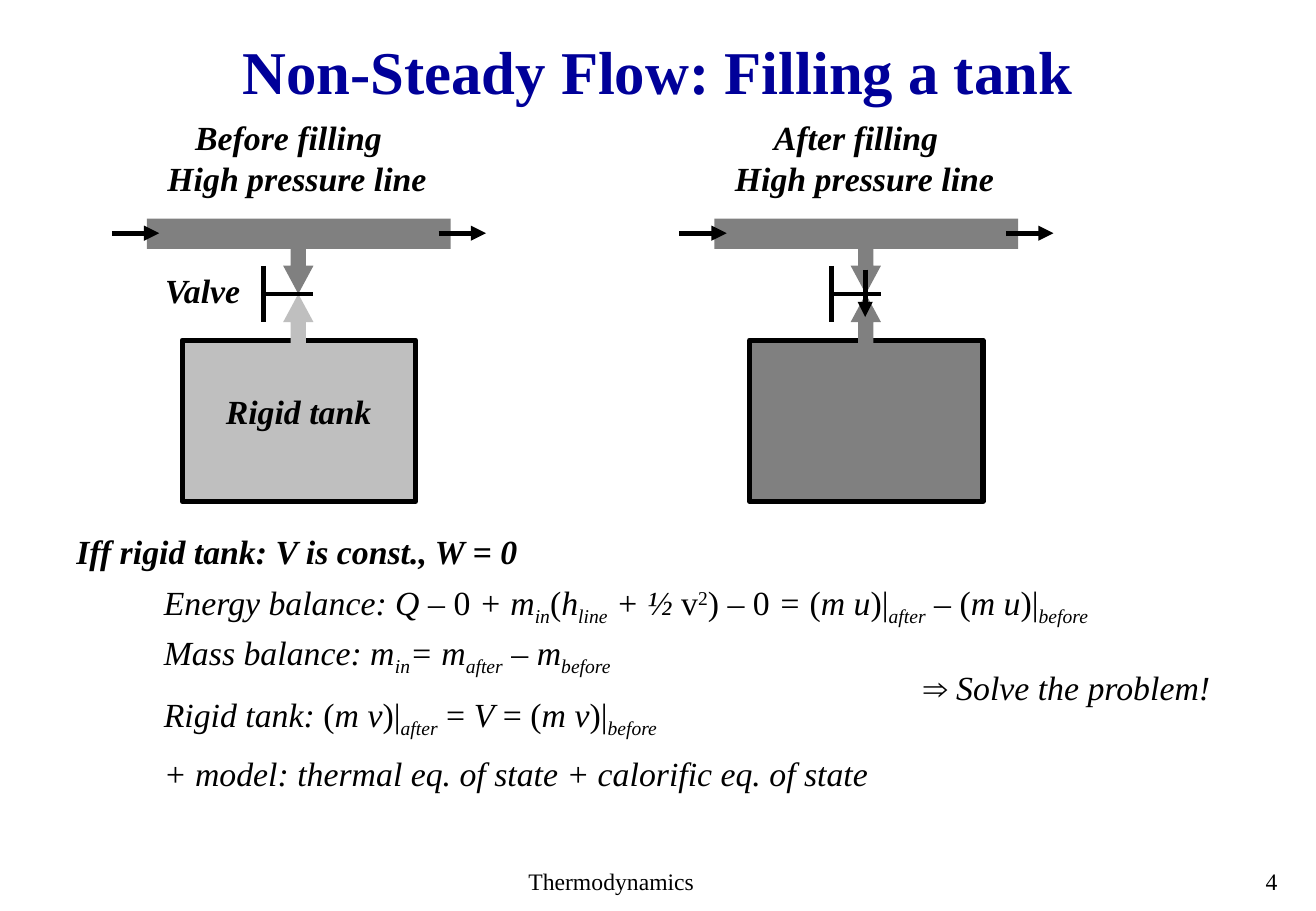
import pptx
import pptx.dml.color
import pptx.enum.dml
import pptx.enum.shapes
import pptx.enum.text
import pptx.oxml
import pptx.oxml.ns
import pptx.util
from pptx.util import Inches

FONT = "Times New Roman"
BLACK, NAVY, DARK, LIGHT = "000000", "000099", "808080", "BFBFBF"
BASELINES = {"sub": "-25000", "sup": "30000"}
SHAPES = pptx.enum.shapes.MSO_SHAPE
ALIGN = pptx.enum.text.PP_ALIGN

ENERGY = [
    ("Energy balance: Q – ", "italic"), ("0", ""), (" + m", "italic"), ("in", "italic sub"),
    ("(", ""), ("h", "italic"), ("line", "italic sub"), (" + ½ ", "italic"), ("v", ""),
    ("2", "sup"), (")", ""), (" – ", "italic"), ("0", ""), (" = ", "italic"), ("(", ""),
    ("m u", "italic"), (")|", ""), ("after", "italic sub"), (" – (", ""),
    ("m u", "italic"), (")|", ""), ("before", "italic sub"),
]
MASS = [
    ("Mass balance: m", "italic"), ("in", "italic sub"), ("= m", "italic"),
    ("after", "italic sub"), (" – ", ""), ("m", "italic"), ("before", "italic sub"),
]
RIGID = [
    ("Rigid tank: ", "italic"), ("(", ""), ("m v", "italic"), (")|", ""),
    ("after", "italic sub"), (" = ", ""), ("V", "italic"), (" = (", ""),
    ("m v", "italic"), (")|", ""), ("before", "italic sub"),
]
MODEL = [("+ model: thermal eq. of state + calorific eq. of state", "italic")]
SOLVE = [("⇒", ""), (" Solve the problem!", "italic")]


def color(value):
    """Return the colour for a hex string."""
    return pptx.dml.color.RGBColor.from_string(value)


def format_paragraph(paragraph, size, fill=BLACK, bold=False, align=ALIGN.LEFT):
    """Set the shared font and alignment of a paragraph."""
    paragraph.alignment = align
    font = paragraph.font
    font.name, font.size, font.bold = FONT, pptx.util.Pt(size), bold
    font.color.rgb = color(fill)


def add_text(shapes, box, runs, size=20, bold=False, align=ALIGN.LEFT):
    """Add a one-line text box from (text, style) runs."""
    frame = shapes.add_textbox(*map(Inches, box)).text_frame
    frame.word_wrap = False
    frame.auto_size = pptx.enum.text.MSO_AUTO_SIZE.SHAPE_TO_FIT_TEXT
    paragraph = frame.paragraphs[0]
    for text, style in runs:
        run = paragraph.add_run()
        run.text = text
        run.font.italic = "italic" in style
        for name, offset in BASELINES.items():
            if name in style:
                run.font._element.set("baseline", offset)
    format_paragraph(paragraph, size, bold=bold, align=align)


def add_label(shapes, box, text, align=ALIGN.LEFT):
    """Add a bold italic label."""
    add_text(shapes, box, [(text, "italic")], bold=True, align=align)


def add_block(shapes, kind, box, fill, outlined=False):
    """Add a filled shape, with a thick black outline if asked."""
    shape = shapes.add_shape(kind, *map(Inches, box))
    shape.shadow.inherit = False
    shape.fill.solid()
    shape.fill.fore_color.rgb = color(fill)
    if outlined:
        shape.line.color.rgb = color(BLACK)
        shape.line.width = pptx.util.Pt(3)
    else:
        shape.line.fill.background()
    return shape


def add_line(shapes, start, end, width=3, arrow=False):
    """Add a black line, optionally ending in an arrowhead."""
    line = shapes.add_connector(
        pptx.enum.shapes.MSO_CONNECTOR.STRAIGHT, *map(Inches, (*start, *end)))
    line.line.color.rgb = color(BLACK)
    line.line.width = pptx.util.Pt(width)
    if arrow:
        head = pptx.oxml.parse_xml(
            f'<a:tailEnd {pptx.oxml.ns.nsdecls("a")} type="triangle"/>')
        line.line._get_or_add_ln().append(head)
    line._element.spPr.append(
        pptx.oxml.parse_xml(f'<a:effectLst {pptx.oxml.ns.nsdecls("a")}/>'))


def add_title(slide, box, text):
    """Place and format the slide title."""
    title = slide.shapes.title
    title.left, title.top, title.width, title.height = map(Inches, box)
    frame = title.text_frame
    frame.text = text
    frame.word_wrap = False
    frame.vertical_anchor = pptx.enum.text.MSO_ANCHOR.MIDDLE
    paragraph = frame.paragraphs[0]
    paragraph.line_spacing = 0.9
    format_paragraph(paragraph, 36, NAVY, True, ALIGN.CENTER)


def add_tank_diagram(slide, left, top, caption, tank_fill):
    """Draw the supply line, valve and tank from the given corner."""
    shapes = slide.shapes.add_group_shape().shapes
    flow, valve = top + 1.01, top + 1.51
    add_block(shapes, SHAPES.RECTANGLE, (left + 0.58, top + 1.89, 1.92, 1.33), tank_fill, True)
    add_block(shapes, SHAPES.RECTANGLE, (left + 0.29, top + 0.89, 2.5, 0.25), DARK)
    for kind, arrow_top, fill in ((SHAPES.UP_ARROW, valve, tank_fill),
                                  (SHAPES.DOWN_ARROW, flow, DARK)):
        arrow = add_block(shapes, kind, (left + 1.41, arrow_top, 0.25, 0.5), fill)
        arrow.adjustments[1] = 0.93
    add_line(shapes, (left + 1.25, valve), (left + 1.66, valve), 2.25)
    add_line(shapes, (left + 1.25, valve - 0.23), (left + 1.25, valve + 0.23))
    for start in (left, left + 2.69):
        add_line(shapes, (start, flow), (start + 0.39, flow), arrow=True)
    add_label(shapes, (left + 0.58, top, 1.75, 0.44), caption, ALIGN.CENTER)
    add_label(shapes, (left + 0.36, top + 0.34, 2.35, 0.44), "High pressure line")


def add_balances(slide, left, top):
    """Write the assumption, the balance equations and the conclusion."""
    shapes = slide.shapes
    add_label(shapes, (left, top, 3.86, 0.44), "Iff rigid tank: V is const., W = 0")
    for offset, width, runs in ((0.42, 8.04, ENERGY), (0.83, 4.03, MASS),
                                (1.34, 4.5, RIGID), (1.83, 6.04, MODEL)):
        add_text(shapes, (left + 0.72, top + offset, width, 0.44), runs)
    add_text(shapes, (left + 6.97, top + 1.12, 2.65, 0.44), SOLVE)


def add_footer(slide, top):
    """Write the course name and the slide number."""
    add_text(slide.shapes, (4.25, top, 1.62, 0.34), [("Thermodynamics", "")], 14)
    add_text(slide.shapes, (10.25, top, 0.43, 0.34), [("4", "")], 14, align=ALIGN.CENTER)


def main():
    """Build and save the slide."""
    presentation = pptx.Presentation()
    presentation.slide_width, presentation.slide_height = Inches(10.83), Inches(7.5)
    slide = presentation.slides.add_slide(presentation.slide_layouts[5])
    add_title(slide, (1.86, 0.3, 7.1, 0.64), "Non-Steady Flow: Filling a tank")
    add_tank_diagram(slide, 0.92, 0.91, "Before filling", LIGHT)
    add_tank_diagram(slide, 5.59, 0.91, "After filling", DARK)
    add_line(slide.shapes, (7.12, 2.22), (7.12, 2.61), arrow=True)
    add_label(slide.shapes, (1.76, 3.17, 1.41, 0.44), "Rigid tank")
    add_label(slide.shapes, (1.26, 2.17, 0.82, 0.44), "Valve")
    add_balances(slide, 0.53, 4.32)
    add_footer(slide, 7.09)
    presentation.save("out.pptx")


if __name__ == "__main__":
    main()
